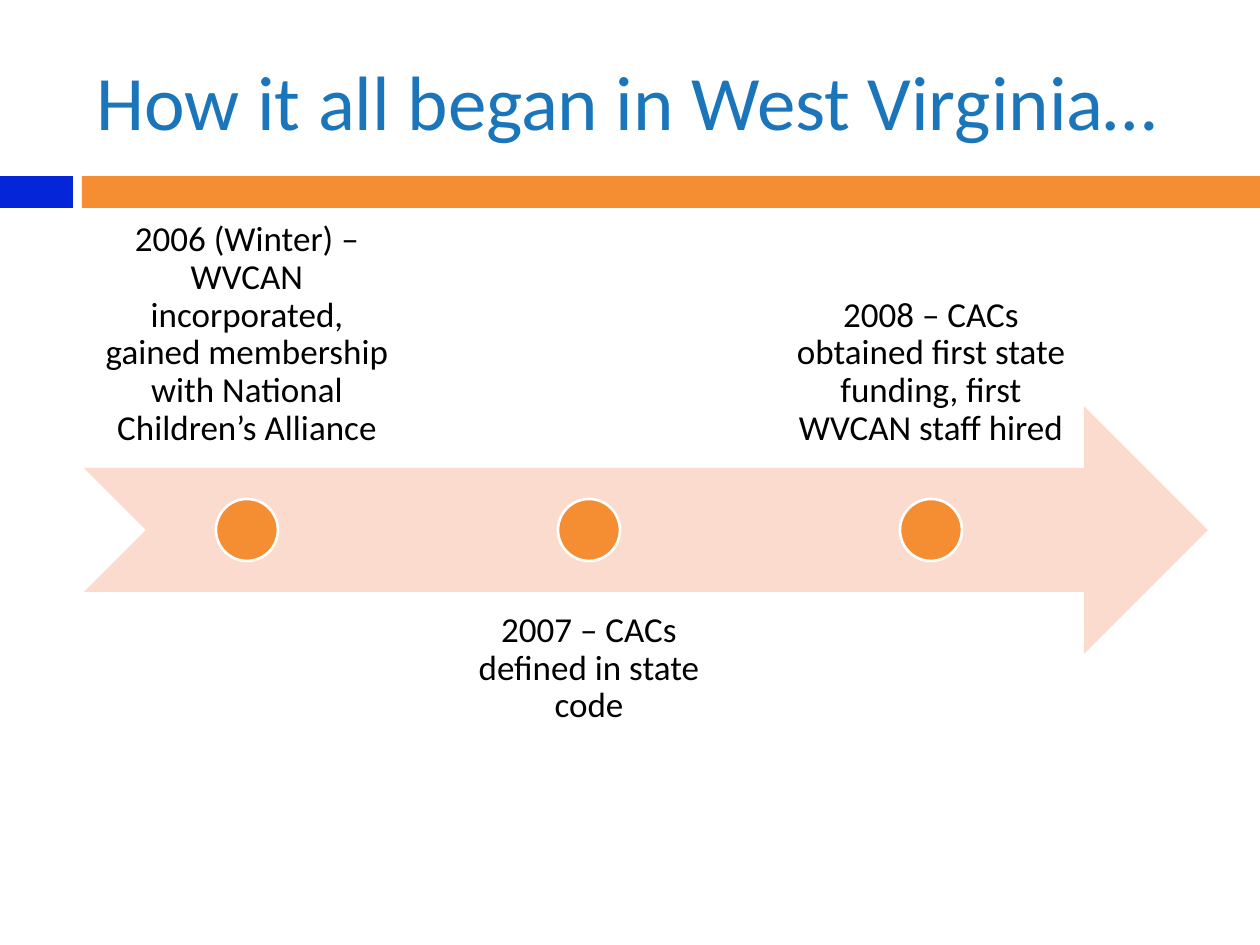
from pptx import Presentation
from pptx import util as u
from pptx.dml.color import RGBColor
from pptx.enum import shapes, text

PX = 914400 / 126
COLORS = {"blue": "0425D8", "orange": "F58E32", "title": "1B75BB",
          "arrow": "FBDBCE", "white": "FFFFFF", "black": "000000"}
EVENTS = [
    "2006 (Winter) – WVCAN incorporated, gained membership with National Children’s Alliance",
    "2007 – CACs defined in state code",
    "2008 – CACs obtained first state funding, first WVCAN staff hired",
]


def px(*lengths):
    """Turn px lengths into EMU."""
    return [u.Emu(round(n * PX)) for n in lengths]


def rgb(name):
    """Look up a named colour."""
    return RGBColor.from_string(COLORS[name])


def apply(obj, values):
    """Set attributes from a dict."""
    for name, value in values.items():
        setattr(obj, name, value)


def add_shape(s, kind, box, fill, line=None):
    """Add a filled preset shape with an optional outline."""
    sp = s.shapes.add_shape(kind, *px(*box))
    sp.shadow.inherit = False
    sp.fill.solid()
    sp.fill.fore_color.rgb = rgb(fill)
    if line:
        sp.line.color.rgb = rgb(line)
        sp.line.width = u.Pt(1.5)
    else:
        sp.line.fill.background()


def write(sp, words, size, color, frame, para):
    """Write one formatted paragraph into a shape."""
    tf = sp.text_frame
    apply(tf, {"word_wrap": True, **frame})
    p = tf.paragraphs[0]
    apply(p, para)
    r = p.add_run()
    r.text = words
    apply(r.font, {"name": "Calibri", "size": u.Pt(size)})
    r.font.color.rgb = rgb(color)


def title(s, box):
    """Place and format the title."""
    sp = s.shapes.title
    apply(sp, dict(zip(("left", "top", "width", "height"), px(*box))))
    write(sp, "How it all began in West Virginia…", 44, "title",
          {"vertical_anchor": text.MSO_ANCHOR.MIDDLE},
          {"alignment": text.PP_ALIGN.LEFT})


def band(s, box):
    """Draw the two-colour band below the title."""
    x, y, w, h = box
    short, start = 73, 82
    rect = shapes.MSO_SHAPE.RECTANGLE
    add_shape(s, rect, (x, y, short, h), "blue")
    add_shape(s, rect, (x + start, y, w - start, h), "orange")


def timeline(s, box):
    """Draw the arrow with event labels alternating above and below it."""
    x, y, w, h = box
    row, label_w, pitch, dot = h * 2 // 5, 326, 342, 62
    add_shape(s, shapes.MSO_SHAPE.NOTCHED_RIGHT_ARROW,
              (x, y + (h - row) // 2, w, row), "arrow")
    margins = dict.fromkeys(
        ("margin_left", "margin_top", "margin_right", "margin_bottom"), px(20)[0])
    for i, event in enumerate(EVENTS):
        left, below = x + i * pitch, i % 2
        sp = s.shapes.add_textbox(
            *px(left, y + below * (h - row), label_w, row))
        anchor = text.MSO_ANCHOR.TOP if below else text.MSO_ANCHOR.BOTTOM
        write(sp, event, 20, "black",
              {"vertical_anchor": anchor, **margins},
              {"alignment": text.PP_ALIGN.CENTER, "line_spacing": 0.9})
        add_shape(s, shapes.MSO_SHAPE.OVAL,
                  (left + (label_w - dot) // 2, y + (h - dot) // 2, dot, dot),
                  "orange", "white")


def main():
    """Build and save the slide."""
    prs = Presentation()
    prs.slide_width, prs.slide_height = px(1260, 945)
    s = prs.slides.add_slide(prs.slide_layouts[5])
    band(s, (0, 176, 1260, 32))
    title(s, (84, 32, 1124, 136))
    timeline(s, (84, 220, 1124, 620))
    prs.save("out.pptx")


if __name__ == "__main__":
    main()
